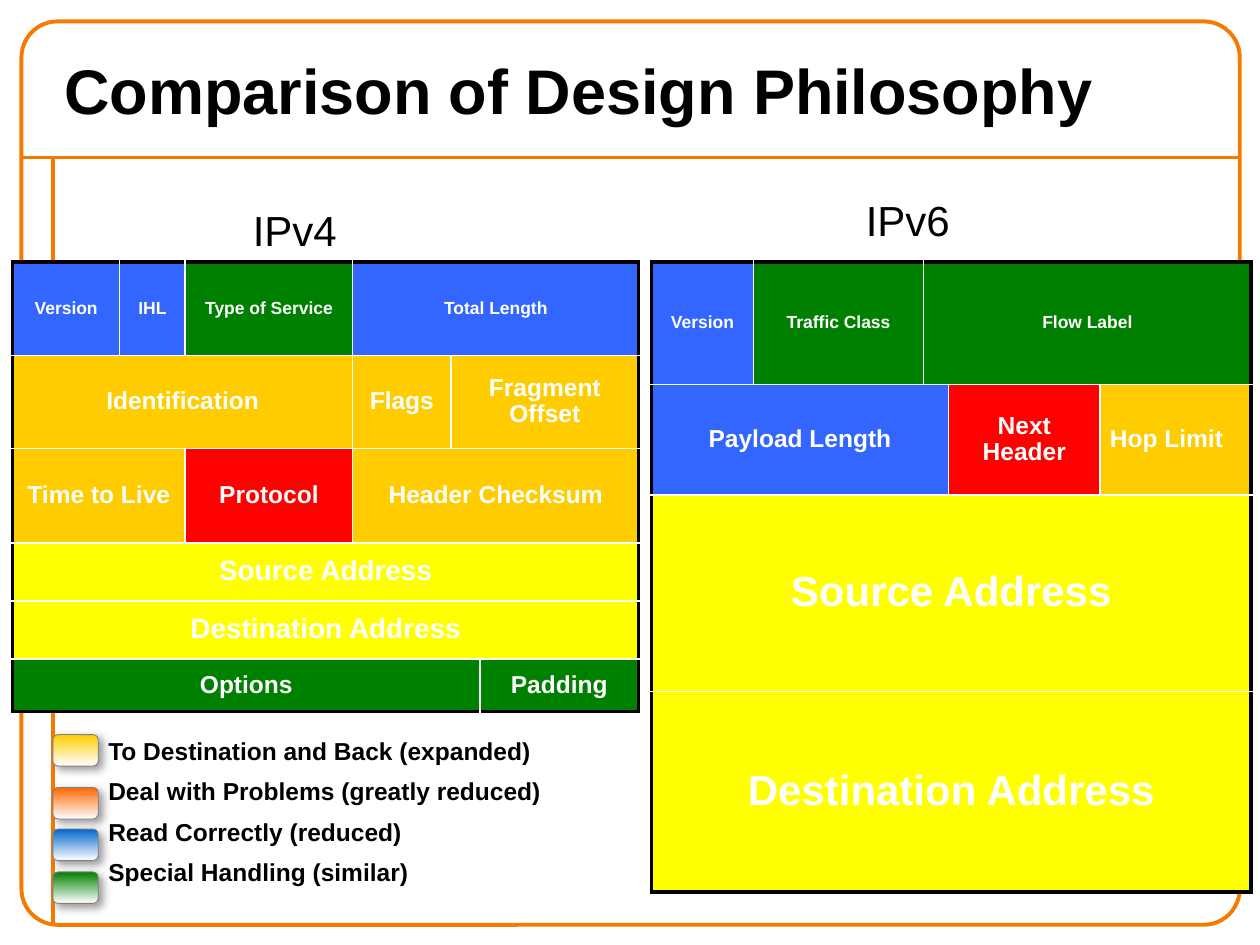
from lxml.etree import SubElement
from pptx import Presentation
from pptx.dml.color import RGBColor
from pptx.enum.shapes import MSO_CONNECTOR, MSO_SHAPE
from pptx.enum.text import MSO_ANCHOR, MSO_AUTO_SIZE, PP_ALIGN
from pptx.oxml import parse_xml
from pptx.oxml.ns import nsdecls, qn
from pptx.util import Inches, Pt

BLACK = RGBColor(0x00, 0x00, 0x00)
WHITE = RGBColor(0xFF, 0xFF, 0xFF)
GRAY = RGBColor(0x80, 0x80, 0x80)
SHADOW = RGBColor(0x77, 0x77, 0x77)
FRAME = RGBColor(0xF4, 0x7A, 0x00)
BLUE = RGBColor(0x33, 0x66, 0xFF)
GREEN = RGBColor(0x00, 0x80, 0x00)
RED = RGBColor(0xFF, 0x00, 0x00)
GOLD = RGBColor(0xFF, 0xCC, 0x00)
YELLOW = RGBColor(0xFF, 0xFF, 0x00)
ORANGE = RGBColor(0xFF, 0x66, 0x00)
DEEP_BLUE = RGBColor(0x00, 0x66, 0xCC)

LEFT, CENTER = PP_ALIGN.LEFT, PP_ALIGN.CENTER

IPV4_COLUMNS = (0.85, 0.52, 1.33, 0.78, 0.23, 1.26)
IPV4_ROWS = (
    (0.74, 10, (("Version", 1, BLUE), ("IHL", 1, BLUE),
                ("Type of Service", 1, GREEN), ("Total Length", 3, BLUE))),
    (0.74, 14, (("Identification", 3, GOLD), ("Flags", 1, GOLD),
                ("Fragment Offset", 2, GOLD))),
    (0.75, 14, (("Time to Live", 2, GOLD), ("Protocol", 1, RED),
                ("Header Checksum", 3, GOLD))),
    (0.46, 16, (("Source Address", 6, YELLOW),)),
    (0.46, 16, (("Destination Address", 6, YELLOW),)),
    (0.42, 14, (("Options", 5, GREEN), ("Padding", 1, GREEN))),
)
IPV6_COLUMNS = (0.81, 1.35, 0.18, 1.2, 1.2)
IPV6_ROWS = (
    (0.97, 10, (("Version", 1, BLUE), ("Traffic Class", 1, GREEN),
                ("Flow Label", 3, GREEN))),
    (0.88, 14, (("Payload Length", 3, BLUE), ("Next Header", 1, RED),
                ("Hop Limit", 1, GOLD, LEFT))),
    (1.56, 24, (("Source Address", 5, YELLOW),)),
    (1.59, 24, (("Destination Address", 5, YELLOW),)),
)
LEGEND = (
    (5.83, GOLD, "To Destination and Back (expanded)"),
    (6.25, ORANGE, "Deal with Problems (greatly reduced)"),
    (6.58, DEEP_BLUE, "Read Correctly (reduced)"),
    (6.92, GREEN, "Special Handling (similar)"),
)


class HeaderSlide:
    """Draws the elements of one slide in a shared style."""

    def __init__(self, slide, font="Arial"):
        self.slide = slide
        self.font = font

    def add_run(self, paragraph, text, size, color=BLACK, bold=False):
        run = paragraph.add_run()
        run.text = text
        run.font.name = self.font
        run.font.size = Pt(size)
        run.font.bold = bold
        run.font.color.rgb = color

    def add_spaced_run(self, paragraph, text, size, color):
        paragraph.line_spacing = 0.95
        paragraph.space_before = Pt(size / 2)
        self.add_run(paragraph, text, size, color, bold=True)

    def set_title(self, text, left, top, width, height):
        title = self.slide.shapes.title
        title.left, title.top = Inches(left), Inches(top)
        title.width, title.height = Inches(width), Inches(height)
        title.text_frame.vertical_anchor = MSO_ANCHOR.MIDDLE
        paragraph = title.text_frame.paragraphs[0]
        paragraph.alignment = LEFT
        self.add_run(paragraph, text, 36, bold=True)

    def add_line(self, x1, y1, x2, y2):
        line = self.slide.shapes.add_connector(
            MSO_CONNECTOR.STRAIGHT, Inches(x1), Inches(y1), Inches(x2), Inches(y2))
        line.line.color.rgb = FRAME
        line.line.width = Pt(2.25)
        SubElement(line._element.spPr, qn("a:effectLst"))

    def add_rounded(self, left, top, width, height, radius, color, line_width):
        shape = self.slide.shapes.add_shape(
            MSO_SHAPE.ROUNDED_RECTANGLE, Inches(left), Inches(top),
            Inches(width), Inches(height))
        shape.adjustments[0] = radius
        shape.shadow.inherit = False
        shape.fill.background()
        shape.line.color.rgb = color
        shape.line.width = Pt(line_width)
        return shape

    def add_swatch(self, left, top, color):
        swatch = self.add_rounded(left, top, 0.36, 0.25, 0.17, GRAY, 0.5)
        swatch.fill.gradient()
        swatch.fill.gradient_angle = 270
        for stop, stop_color in zip(swatch.fill.gradient_stops, (color, WHITE)):
            stop.color.rgb = stop_color
        effects = swatch._element.spPr.find(qn("a:effectLst"))
        effects.append(parse_xml(
            f'<a:outerShdw {nsdecls("a")} blurRad="{Pt(5)}" dist="{Pt(3)}" dir="2700000">'
            f'<a:srgbClr val="{SHADOW}"><a:alpha val="75000"/></a:srgbClr></a:outerShdw>'))

    def add_text_box(self, left, top, width, height, wrap=True, inset=0.08):
        box = self.slide.shapes.add_textbox(
            Inches(left), Inches(top), Inches(width), Inches(height))
        frame = box.text_frame
        frame.word_wrap = wrap
        frame.auto_size = MSO_AUTO_SIZE.SHAPE_TO_FIT_TEXT
        frame.margin_left, frame.margin_right = Inches(inset), Inches(0.08)
        frame.margin_top = frame.margin_bottom = Inches(0.04)
        return frame

    def add_label(self, text, left, top, width, wrap):
        paragraph = self.add_text_box(left, top, width, 0.48, wrap).paragraphs[0]
        paragraph.alignment = CENTER
        self.add_run(paragraph, text, 24)

    def add_legend(self, entries):
        frame = self.add_text_box(0.58, 5.82, 4, 1.34, inset=0.28)
        for index, (top, color, text) in enumerate(entries):
            self.add_swatch(0.42, top, color)
            paragraph = frame.add_paragraph() if index else frame.paragraphs[0]
            self.add_spaced_run(paragraph, text, 14, BLACK)

    def set_borders(self, cell, outer_sides):
        properties = cell._tc.get_or_add_tcPr()
        for side in "LRTB":
            color, width = (BLACK, 2.25) if side in outer_sides else (WHITE, 1)
            properties.append(parse_xml(
                f'<a:ln{side} {nsdecls("a")} w="{Pt(width)}"><a:solidFill>'
                f'<a:srgbClr val="{color}"/></a:solidFill></a:ln{side}>'))

    def fill_field(self, cell, text, size, color, alignment=CENTER):
        cell.vertical_anchor = MSO_ANCHOR.MIDDLE
        cell.margin_left = cell.margin_right = Inches(0.08)
        cell.margin_top = cell.margin_bottom = Inches(0.04)
        cell.fill.solid()
        cell.fill.fore_color.rgb = color
        paragraph = cell.text_frame.paragraphs[0]
        paragraph.alignment = alignment
        self.add_spaced_run(paragraph, text, size, WHITE)

    def add_header_table(self, left, top, columns, rows):
        heights = [height for height, _, _ in rows]
        table = self.slide.shapes.add_table(
            len(rows), len(columns), Inches(left), Inches(top),
            Inches(sum(columns)), Inches(sum(heights))).table
        table.first_row = table.horz_banding = False
        for column, width in zip(table.columns, columns):
            column.width = Inches(width)
        last_row, last_column = len(rows) - 1, len(columns) - 1
        for row, (height, size, fields) in enumerate(rows):
            table.rows[row].height = Inches(height)
            for column in range(len(columns)):
                edges = {"L": column == 0, "R": column == last_column,
                         "T": row == 0, "B": row == last_row}
                end = column
                start = 0
                for field in fields:
                    if start == column:
                        end = start + field[1] - 1
                    start += field[1]
                edges["R"] = end == last_column
                self.set_borders(table.cell(row, column),
                                 [side for side, outer in edges.items() if outer])
            start = 0
            for text, span, color, *alignment in fields:
                cell = table.cell(row, start)
                if span > 1:
                    cell.merge(table.cell(row, start + span - 1))
                self.fill_field(cell, text, size, color, *alignment)
                start += span


def main():
    presentation = Presentation()
    presentation.slide_width, presentation.slide_height = Inches(10), Inches(7.5)
    page = HeaderSlide(presentation.slides.add_slide(presentation.slide_layouts[5]))
    page.add_line(0.17, 1.25, 9.83, 1.25)
    page.add_line(0.42, 1.25, 0.42, 7.33)
    page.add_rounded(0.17, 0.17, 9.67, 7.17, 0.04, FRAME, 2.25)
    page.set_title("Comparison of Design Philosophy", 0.41, 0.34, 9.41, 0.73)
    page.add_header_table(0.1, 2.08, IPV4_COLUMNS, IPV4_ROWS)
    page.add_header_table(5.17, 2.08, IPV6_COLUMNS, IPV6_ROWS)
    page.add_label("IPv4", 1.92, 1.58, 0.84, wrap=False)
    page.add_label("IPv6", 5.83, 1.5, 2.75, wrap=True)
    page.add_legend(LEGEND)
    presentation.save("out.pptx")


if __name__ == "__main__":
    main()
